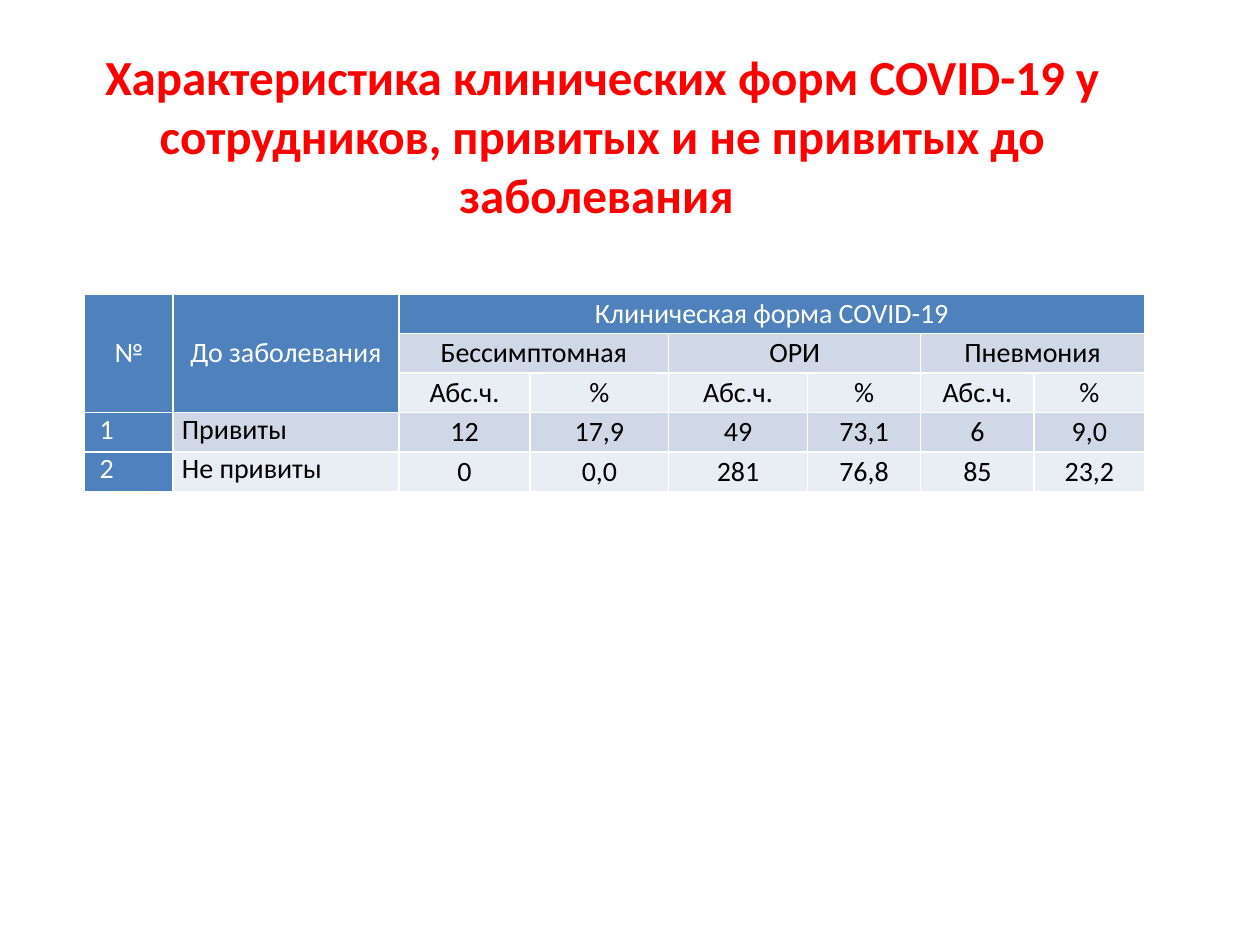
"""Build a slide comparing clinical forms of COVID-19 by vaccination status."""

from typing import NamedTuple

from pptx import Presentation
from pptx.dml.color import RGBColor
from pptx.enum.text import MSO_ANCHOR, PP_ALIGN
from pptx.table import Table
from pptx.text.text import TextFrame
from pptx.util import Pt

RED = RGBColor(0xFF, 0x00, 0x00)
WHITE = RGBColor(0xFF, 0xFF, 0xFF)
BLACK = RGBColor(0x00, 0x00, 0x00)
BLUE = RGBColor(0x4F, 0x81, 0xBD)
DARK_BAND = RGBColor(0xD0, 0xD8, 0xE8)
LIGHT_BAND = RGBColor(0xE9, 0xED, 0xF4)

FONT = "Calibri"
TITLE = (
    "Характеристика клинических форм COVID-19 у сотрудников, "
    "привитых и не привитых до заболевания "
)
COLUMN_WIDTHS = (50.6, 129, 75, 79.2, 79.2, 64.8, 64.8, 63.1)
ROW_HEIGHT = 22.6
HEADER_ROWS = 3
FIRST_VALUE_COLUMN = 2
FORMS = ("Бессимптомная", "ОРИ", "Пневмония")
MEASURES = ("Абс.ч.", "%")


class Group(NamedTuple):
    number: str
    status: str
    values: tuple[str, ...]


class Entry(NamedTuple):
    row: int
    column: int
    text: str
    fill: RGBColor
    color: RGBColor = BLACK
    row_span: int = 1
    column_span: int = 1
    centered: bool = True
    left_margin: float = 5


GROUPS = (
    Group("1", "Привиты", ("12", "17,9", "49", "73,1", "6", "9,0")),
    Group("2", "Не привиты", ("0", "0,0", "281", "76,8", "85", "23,2")),
)


def write_text(
    text_frame: TextFrame, text: str, size: float, color: RGBColor,
    bold: bool, alignment: PP_ALIGN,
) -> None:
    text_frame.text = text
    paragraph = text_frame.paragraphs[0]
    paragraph.alignment = alignment
    font = paragraph.runs[0].font
    font.name, font.size, font.bold = FONT, Pt(size), bold
    font.color.rgb = color


def draw_entry(table: Table, entry: Entry) -> None:
    cell = table.cell(entry.row, entry.column)
    if entry.row_span > 1 or entry.column_span > 1:
        cell.merge(table.cell(
            entry.row + entry.row_span - 1,
            entry.column + entry.column_span - 1,
        ))
    cell.fill.solid()
    cell.fill.fore_color.rgb = entry.fill
    cell.margin_left, cell.margin_right = Pt(entry.left_margin), Pt(5)
    cell.margin_top = cell.margin_bottom = Pt(0)
    cell.vertical_anchor = MSO_ANCHOR.MIDDLE if entry.centered else MSO_ANCHOR.TOP
    alignment = PP_ALIGN.CENTER if entry.centered else PP_ALIGN.JUSTIFY
    write_text(cell.text_frame, entry.text, 16, entry.color, False, alignment)


def header_entries() -> list[Entry]:
    value_count = len(FORMS) * len(MEASURES)
    entries = [
        Entry(0, 0, "№", BLUE, WHITE, row_span=HEADER_ROWS),
        Entry(0, 1, "До заболевания", BLUE, WHITE, row_span=HEADER_ROWS),
        Entry(0, FIRST_VALUE_COLUMN, "Клиническая форма COVID-19", BLUE, WHITE,
              column_span=value_count),
    ]
    for index, form in enumerate(FORMS):
        column = FIRST_VALUE_COLUMN + index * len(MEASURES)
        entries.append(Entry(1, column, form, DARK_BAND, column_span=len(MEASURES)))
        for offset, measure in enumerate(MEASURES):
            entries.append(Entry(2, column + offset, measure, LIGHT_BAND))
    return entries


def group_entries(row: int, group: Group) -> list[Entry]:
    band = DARK_BAND if row % 2 else LIGHT_BAND
    return [
        Entry(row, 0, group.number, BLUE, WHITE, centered=False, left_margin=8.6),
        Entry(row, 1, group.status, band, centered=False),
        *(Entry(row, column, value, band)
          for column, value in enumerate(group.values, FIRST_VALUE_COLUMN)),
    ]


def main() -> None:
    presentation = Presentation()
    presentation.slide_width, presentation.slide_height = Pt(720), Pt(540)
    slide = presentation.slides.add_slide(presentation.slide_layouts[5])

    title = slide.shapes.title
    title.left, title.top, title.width, title.height = Pt(20), Pt(32), Pt(648), Pt(90)
    title.text_frame.vertical_anchor = MSO_ANCHOR.MIDDLE
    write_text(title.text_frame, TITLE, 28, RED, True, PP_ALIGN.CENTER)

    row_count = HEADER_ROWS + len(GROUPS)
    table = slide.shapes.add_table(
        row_count, len(COLUMN_WIDTHS), Pt(48.4), Pt(168),
        Pt(sum(COLUMN_WIDTHS)), Pt(row_count * ROW_HEIGHT),
    ).table
    table.first_col = True
    for column, width in zip(table.columns, COLUMN_WIDTHS):
        column.width = Pt(width)
    for row in table.rows:
        row.height = Pt(ROW_HEIGHT)

    entries = header_entries()
    for row, group in enumerate(GROUPS, HEADER_ROWS):
        entries.extend(group_entries(row, group))
    for entry in entries:
        draw_entry(table, entry)

    presentation.save("out.pptx")


if __name__ == "__main__":
    main()
